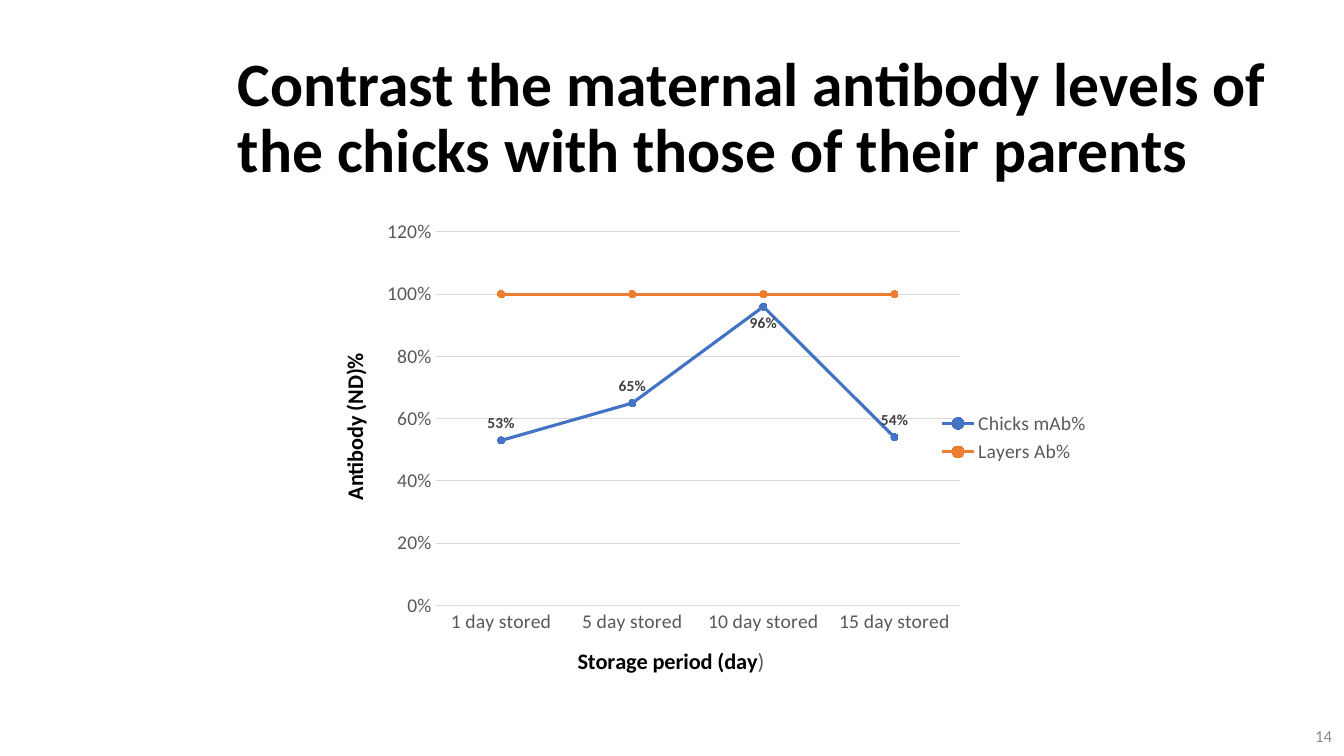
from dataclasses import dataclass
from typing import Any, Optional

import lxml.etree
import pptx
import pptx.chart.data
import pptx.dml.color
import pptx.enum.chart
import pptx.enum.text
import pptx.oxml.ns
import pptx.util

FONT = "Calibri"
COLORS = {
    "black": "000000",
    "label": "404040",
    "axis": "595959",
    "grid": "D9D9D9",
    "number": "8C8C8C",
    "chicks": "4472C4",
    "layers": "ED7D31",
}
PERCENT = "0%"


@dataclass
class LineSeries:
    name: str
    values: list[float]
    color: str
    labelled: bool = False


CATEGORIES = [f"{days} day stored" for days in (1, 5, 10, 15)]
SERIES = [
    LineSeries("Chicks mAb%", [0.53, 0.65, 0.96, 0.54], "chicks", labelled=True),
    LineSeries("Layers Ab%", [1, 1, 1, 1], "layers"),
]
PEAK_INDEX = 2


def rgb(color: str) -> pptx.dml.color.RGBColor:
    return pptx.dml.color.RGBColor.from_string(COLORS[color])


def set_font(font: Any, size: float, color: str, bold: bool = False) -> None:
    font.name = FONT
    font.size = pptx.util.Pt(size)
    font.bold = bold
    font.color.rgb = rgb(color)


def set_line(line: Any, color: str, width: float) -> None:
    line.color.rgb = rgb(color)
    line.width = pptx.util.Pt(width)


def place(element: Any, x: float, y: float, width: Optional[float] = None,
          height: Optional[float] = None) -> None:
    """Give a chart part a manual layout, in fractions of the chart."""
    qn = pptx.oxml.ns.qn
    for old_layout in element.findall(qn("c:layout")):
        element.remove(old_layout)
    layout = lxml.etree.Element(qn("c:layout"))
    manual = lxml.etree.SubElement(layout, qn("c:manualLayout"))
    settings = {"xMode": "edge", "yMode": "edge", "x": x, "y": y}
    if width is not None:
        settings.update(w=width, h=height)
    if element.tag == qn("c:plotArea"):
        settings = {"layoutTarget": "inner", **settings}
    for name, value in settings.items():
        lxml.etree.SubElement(manual, qn(f"c:{name}")).set("val", str(value))
    overlay = element.find(qn("c:overlay"))
    if overlay is None:
        element.insert(0, layout)
    else:
        overlay.addprevious(layout)


def format_axis(axis: Any, title: str, x: float, y: float) -> Any:
    axis.major_tick_mark = pptx.enum.chart.XL_TICK_MARK.NONE
    axis.minor_tick_mark = pptx.enum.chart.XL_TICK_MARK.NONE
    set_font(axis.tick_labels.font, 14, "axis")
    paragraph = axis.axis_title.text_frame.paragraphs[0]
    run = paragraph.add_run()
    run.text = title
    set_font(run.font, 16, "black", bold=True)
    place(axis.axis_title._element, x, y)
    return paragraph


def format_series(series: Any, item: LineSeries) -> None:
    series.smooth = False
    set_line(series.format.line, item.color, 2.25)
    marker = series.marker
    marker.style = pptx.enum.chart.XL_MARKER_STYLE.CIRCLE
    marker.size = 5
    marker.format.fill.solid()
    marker.format.fill.fore_color.rgb = rgb(item.color)
    set_line(marker.format.line, item.color, 0.75)
    if item.labelled:
        labels = series.data_labels
        labels.show_value = True
        labels.number_format = PERCENT
        labels.number_format_is_linked = False
        labels.position = pptx.enum.chart.XL_LABEL_POSITION.ABOVE
        set_font(labels.font, 11, "label", bold=True)
        peak_label = series.points[PEAK_INDEX].data_label
        set_font(peak_label.font, 11, "label", bold=True)
        peak_label.position = pptx.enum.chart.XL_LABEL_POSITION.BELOW


def add_antibody_chart(slide: Any) -> None:
    data = pptx.chart.data.CategoryChartData(number_format=PERCENT)
    data.categories = CATEGORIES
    for item in SERIES:
        data.add_series(item.name, item.values)
    inches = pptx.util.Inches
    chart = slide.shapes.add_chart(
        pptx.enum.chart.XL_CHART_TYPE.LINE_MARKERS,
        inches(3.25), inches(2.02), inches(7.65), inches(4.73), data).chart
    chart.has_title = False
    set_font(chart.font, 10, "black")
    chart.plots[0].vary_by_categories = False
    place(chart._chartSpace.chart.plotArea, 0.14, 0.06, 0.68, 0.79)

    # Axes
    category_title = format_axis(chart.category_axis, "Storage period (day", 0.32, 0.93)
    closing = category_title.add_run()
    closing.text = ")"
    set_font(closing.font, 16, "axis")
    set_line(chart.category_axis.format.line, "grid", 0.75)

    value_axis = chart.value_axis
    format_axis(value_axis, "Antibody (ND)%", 0.01, 0.31)
    value_axis.minimum_scale = 0
    value_axis.maximum_scale = 1.2
    value_axis.major_unit = 0.2
    value_axis.tick_labels.number_format = PERCENT
    value_axis.tick_labels.number_format_is_linked = False
    value_axis.format.line.fill.background()
    set_line(value_axis.major_gridlines.format.line, "grid", 0.75)

    # Series and legend
    for series, item in zip(chart.plots[0].series, SERIES):
        format_series(series, item)
    chart.has_legend = True
    chart.legend.position = pptx.enum.chart.XL_LEGEND_POSITION.RIGHT
    chart.legend.include_in_layout = False
    set_font(chart.legend.font, 14, "axis")
    place(chart.legend._element, 0.79, 0.43, 0.2, 0.13)


def add_title(slide: Any) -> None:
    title = slide.shapes.title
    title.left, title.top = pptx.util.Inches(2.26), pptx.util.Inches(0.46)
    title.width, title.height = pptx.util.Inches(10.74), pptx.util.Inches(1.45)
    frame = title.text_frame
    frame.text = "Contrast the maternal antibody levels of the chicks with those of their parents"
    frame.word_wrap = True
    frame.auto_size = pptx.enum.text.MSO_AUTO_SIZE.NONE
    frame.vertical_anchor = pptx.enum.text.MSO_ANCHOR.MIDDLE
    paragraph = frame.paragraphs[0]
    paragraph.alignment = pptx.enum.text.PP_ALIGN.LEFT
    paragraph.line_spacing = 0.9
    set_font(paragraph.font, 44, "black", bold=True)


def add_slide_number(slide: Any) -> None:
    inches = pptx.util.Inches
    frame = slide.shapes.add_textbox(
        inches(10.31), inches(7.1), inches(3), inches(0.4)).text_frame
    frame.text = "14"
    frame.word_wrap = True
    frame.vertical_anchor = pptx.enum.text.MSO_ANCHOR.MIDDLE
    paragraph = frame.paragraphs[0]
    paragraph.alignment = pptx.enum.text.PP_ALIGN.RIGHT
    set_font(paragraph.font, 12, "number")


def main() -> None:
    presentation = pptx.Presentation()
    presentation.slide_width = pptx.util.Inches(13.33)
    presentation.slide_height = pptx.util.Inches(7.5)
    slide = presentation.slides.add_slide(presentation.slide_layouts[5])
    add_title(slide)
    add_slide_number(slide)
    add_antibody_chart(slide)
    presentation.save("out.pptx")


if __name__ == "__main__":
    main()
